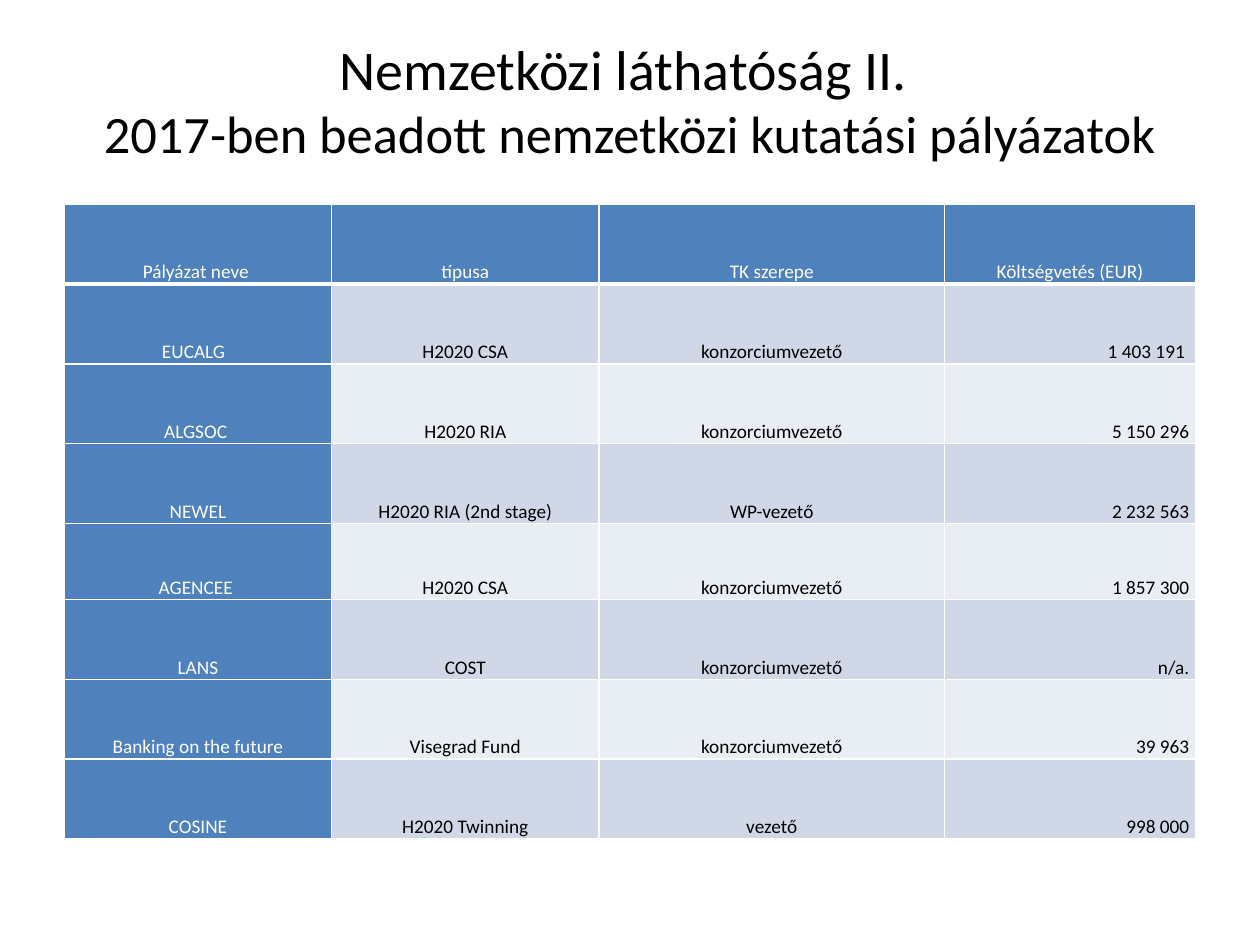
from lxml import etree
from pptx import Presentation
from pptx.dml.color import RGBColor as RGB
from pptx.enum.text import MSO_ANCHOR as Anchor, PP_ALIGN as Align
from pptx.oxml.ns import qn
from pptx.util import Inches, Pt

WIDE, HIGH = Inches(10), Inches(7.5)
FONT = "Calibri"
COLORS = {"head": "4F81BD", "odd": "D0D8E8", "even": "E9EDF4",
          "white": "FFFFFF", "black": "000000"}

TITLE = [("Nemzetközi láthatóság II. ", 32),
         ("2017-ben beadott nemzetközi kutatási pályázatok", 30)]
ROWS = [
    ("Pályázat neve ", "típusa", "TK szerepe", "Költségvetés (EUR)"),
    ("EUCALG  ", "H2020 CSA", "konzorciumvezető", " 1 403 191 "),
    ("ALGSOC ", "H2020 RIA", "konzorciumvezető", "5 150 296"),
    ("NEWEL", "H2020 RIA (2nd stage)", "WP-vezető", "2 232 563"),
    ("AGENCEE ", "H2020 CSA", "konzorciumvezető", "1 857 300"),
    ("LANS", "COST", "konzorciumvezető", "n/a."),
    ("Banking on the future", "Visegrad Fund", "konzorciumvezető", "39 963"),
    ("COSINE", "H2020 Twinning", "vezető", "998 000"),
]
# Relative sizes of the table's columns and rows
COLS = [2.12, 2.12, 2.74, 1.99]
LINES = [0.63] * 4 + [0.6] + [0.63] * 3


def style(run, size, color):
    run.font.name = FONT
    run.font.size = Pt(size)
    run.font.color.rgb = RGB.from_string(COLORS[color])


def share(parts, sizes, total):
    """Split a length among columns or rows; return one length for each."""
    return [(part, int(total * size / sum(sizes)))
            for part, size in zip(parts, sizes)]


def edge(cell, foot):
    """Draw white cell borders, with the bottom one foot points wide."""
    props = cell._tc.get_or_add_tcPr()
    sides = [("lnL", 1), ("lnR", 1), ("lnT", 1), ("lnB", foot)]
    for spot, (side, width) in enumerate(sides):
        line = etree.Element(qn(f"a:{side}"), w=str(Pt(width)))
        fill = etree.SubElement(line, qn("a:solidFill"))
        etree.SubElement(fill, qn("a:srgbClr"), val=COLORS["white"])
        props.insert(spot, line)


def add_title(slide, left, top, width, height):
    frame = slide.shapes.add_textbox(left, top, width, height).text_frame
    frame.word_wrap = True
    frame.vertical_anchor = Anchor.MIDDLE
    para = frame.paragraphs[0]
    para.text = "\v".join(text for text, _ in TITLE)
    para.alignment = Align.CENTER
    for run, (_, size) in zip(para.runs, TITLE):
        style(run, size, "black")


def fill_cell(cell, text, row, col):
    head = row == 0 or col == 0
    tone = "head" if head else "odd" if row % 2 else "even"
    cell.fill.solid()
    cell.fill.fore_color.rgb = RGB.from_string(COLORS[tone])
    edge(cell, 1 if row else 3)
    cell.margin_left = cell.margin_right = Inches(0.05)
    cell.margin_top = cell.margin_bottom = 0
    cell.vertical_anchor = Anchor.BOTTOM
    para = cell.text_frame.paragraphs[0]
    para.text = text
    para.line_spacing = 1.15
    para.alignment = Align.RIGHT if row and col == 3 else Align.CENTER
    style(para.runs[0], 11, "white" if head else "black")
    para.runs[0].font.bold = False


def add_grid(slide, left, top, width, height):
    table = slide.shapes.add_table(len(ROWS), len(COLS), left, top,
                                   width, height).table
    for col, size in share(table.columns, COLS, width):
        col.width = size
    for line, size in share(table.rows, LINES, height):
        line.height = size
    for row, texts in enumerate(ROWS):
        for col, text in enumerate(texts):
            fill_cell(table.cell(row, col), text, row, col)


def main():
    deck = Presentation()
    deck.slide_width, deck.slide_height = WIDE, HIGH
    slide = deck.slides.add_slide(deck.slide_layouts[6])
    # Heading, then the table of proposals
    add_title(slide, int(WIDE * 0.05), 0, int(WIDE * 0.9), int(HIGH * 0.21))
    add_grid(slide, Inches(0.51), Inches(1.62), Inches(8.98), Inches(5.04))
    deck.save("out.pptx")


if __name__ == "__main__":
    main()
